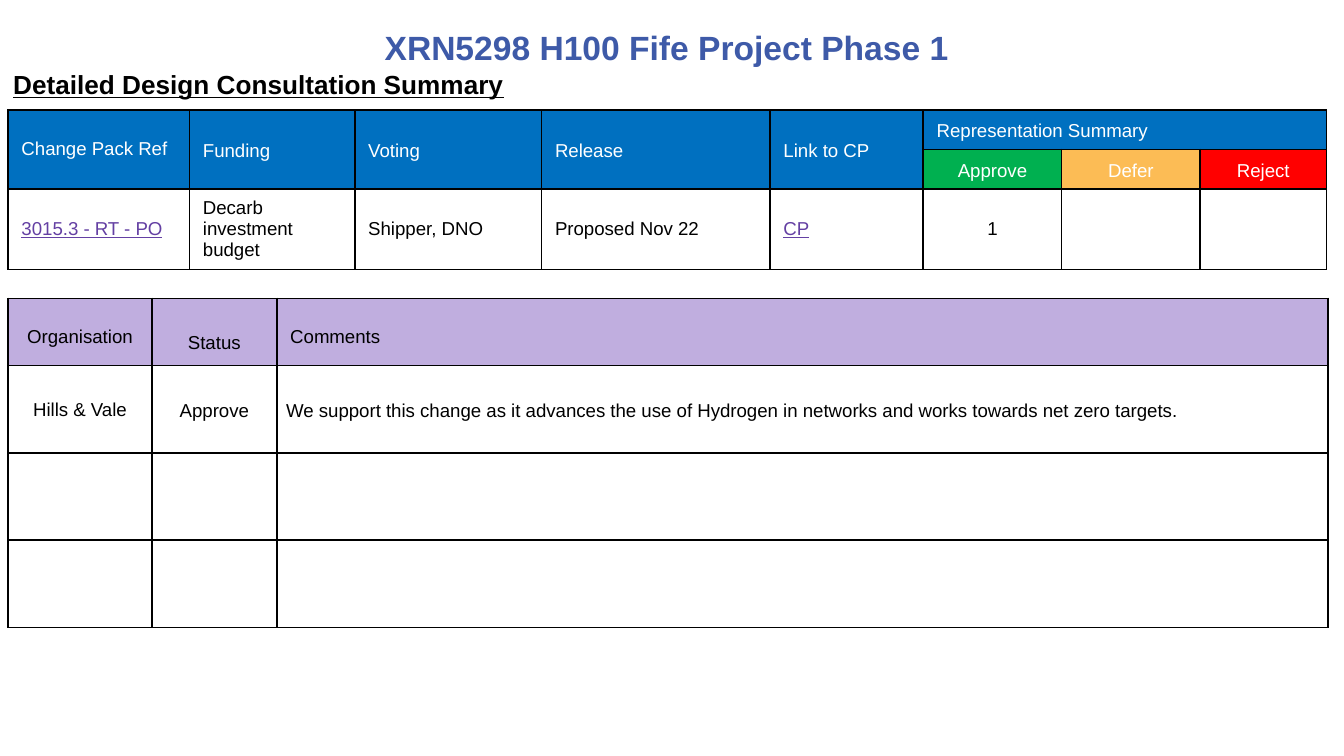
"""Build the consultation summary slide with its two tables."""
from dataclasses import dataclass
from typing import Optional

from lxml import etree
from pptx import Presentation
from pptx.dml.color import RGBColor
from pptx.enum import text as t
from pptx.oxml import ns
from pptx.util import Inches, Pt

BLACK, WHITE, BLUE, LILAC, LINK = "000000", "FFFFFF", "0070C0", "C0AEDF", "6440A3"
LEFT, CENTER = t.PP_ALIGN.LEFT, t.PP_ALIGN.CENTER
TOP, MIDDLE = t.MSO_ANCHOR.TOP, t.MSO_ANCHOR.MIDDLE


@dataclass
class Entry:
    row: int
    col: int
    text: str
    color: str = BLACK
    fill: Optional[str] = None
    align: t.PP_ALIGN = LEFT
    anchor: t.MSO_ANCHOR = MIDDLE
    spacing: Optional[float] = None
    underline: bool = False
    margins: tuple = (0.1, 0.05, 0.1, 0.05)
    span: tuple = (1, 1)


@dataclass
class Grid:
    left: float
    top: float
    height: float
    cols: list
    rows: list
    entries: list


def rgb(value: str) -> RGBColor:
    return RGBColor.from_string(value)


def style(paragraph, size: float, color: str, bold: bool = False, underline: bool = False) -> None:
    for run in paragraph.runs:
        font = run.font
        font.name, font.size, font.bold, font.underline = "Arial", Pt(size), bold, underline
        font.color.rgb = rgb(color)


def add_borders(cell, color: str = BLACK, width: float = 1) -> None:
    properties = cell._tc.get_or_add_tcPr()
    for index, side in enumerate(("a:lnL", "a:lnR", "a:lnT", "a:lnB")):
        line = etree.Element(ns.qn(side), w=str(Pt(width)))
        fill = etree.SubElement(line, ns.qn("a:solidFill"))
        etree.SubElement(fill, ns.qn("a:srgbClr"), val=color)
        properties.insert(index, line)


def fill_cell(table, entry: Entry) -> None:
    cell = table.cell(entry.row, entry.col)
    height, width = entry.span
    if entry.span != (1, 1):
        cell.merge(table.cell(entry.row + height - 1, entry.col + width - 1))
    cell.text_frame.text = entry.text
    cell.vertical_anchor = entry.anchor
    cell.margin_left, cell.margin_top, cell.margin_right, cell.margin_bottom = map(Inches, entry.margins)
    paragraph = cell.text_frame.paragraphs[0]
    paragraph.alignment = entry.align
    if entry.spacing:
        paragraph.line_spacing = entry.spacing
    style(paragraph, 10, entry.color, underline=entry.underline)
    if entry.fill:
        cell.fill.solid()
        cell.fill.fore_color.rgb = rgb(entry.fill)


def add_grid(slide, grid: Grid) -> None:
    frame = slide.shapes.add_table(
        len(grid.rows), len(grid.cols), Inches(grid.left), Inches(grid.top),
        Inches(sum(grid.cols)), Inches(grid.height))
    table = frame.table
    table.first_row = table.horz_banding = False
    for column, width in zip(table.columns, grid.cols):
        column.width = Inches(width)
    for row, height in zip(table.rows, grid.rows):
        row.height = Inches(height)
    for cell in table.iter_cells():
        cell.fill.background()
        add_borders(cell)
    for entry in grid.entries:
        fill_cell(table, entry)
    frame.height = Inches(grid.height)


def change_pack() -> Grid:
    headings = ["Change Pack Ref", "Funding", "Voting", "Release", "Link to CP"]
    votes = [("Approve", "00B050"), ("Defer", "FCBC55"), ("Reject", "FF0000")]
    details = ["3015.3 - RT - PO", "Decarb investment budget", "Shipper, DNO",
               "Proposed Nov 22", "CP", "1"]
    links = (0, 4)
    entries = [Entry(0, col, name, WHITE, BLUE, spacing=1.15 if col else None, span=(2, 1))
               for col, name in enumerate(headings)]
    entries.append(Entry(0, 5, "Representation Summary", WHITE, BLUE, spacing=1.15, span=(1, 3)))
    entries += [Entry(1, col, name, WHITE, fill, CENTER, spacing=1.15)
                for col, (name, fill) in enumerate(votes, start=5)]
    entries += [Entry(2, col, detail, LINK if col in links else BLACK,
                      align=CENTER if col == 5 else LEFT, underline=col in links)
                for col, detail in enumerate(details)]
    return Grid(0.06, 0.82, 1.15, [1.35, 1.23, 1.39, 1.7, 1.14, 1.03, 1.03, 0.94],
                [0.26, 0.26, 0.56], entries)


def responses() -> Grid:
    heading_margins = (0.1, 0.21, 0.1, 0.05)
    comment = ("We support this change as it advances the use of Hydrogen in networks "
               "and works towards net zero targets.")
    entries = [
        Entry(0, 0, "Organisation", fill=LILAC, align=CENTER, anchor=TOP, margins=heading_margins),
        Entry(0, 1, "Status", fill=LILAC, align=CENTER, margins=(0.06, 0.16, 0.06, 0)),
        Entry(0, 2, "Comments", fill=LILAC, anchor=TOP, margins=heading_margins),
        Entry(1, 0, "Hills & Vale", align=CENTER, margins=(0.01, 0.01, 0.01, 0)),
        Entry(1, 1, "Approve", align=CENTER, spacing=1.15, margins=(0.06, 0, 0.06, 0)),
        Entry(1, 2, comment, spacing=1.15, margins=(0.07, 0, 0.07, 0)),
    ]
    return Grid(0.06, 2.22, 2.46, [1.07, 0.93, 7.82], [0.5] + [0.65] * 3, entries)


def main() -> None:
    deck = Presentation()
    deck.slide_width = Inches(10)
    deck.slide_height = deck.slide_width * 9 // 16
    slide = deck.slides.add_slide(deck.slide_layouts[5])

    title = slide.shapes.title
    title.left, title.top, title.width, title.height = map(Inches, (0.06, 0.04, 9.87, 0.62))
    title.text_frame.text = "XRN5298 H100 Fife Project Phase 1 "
    title.text_frame.vertical_anchor = MIDDLE
    title.text_frame.paragraphs[0].alignment = CENTER
    style(title.text_frame.paragraphs[0], 18, "3E5AA8", bold=True)

    subtitle = slide.shapes.add_textbox(*map(Inches, (0, 0.46, 4.77, 0.34))).text_frame
    subtitle.word_wrap = True
    subtitle.auto_size = t.MSO_AUTO_SIZE.SHAPE_TO_FIT_TEXT
    subtitle.text = "Detailed Design Consultation Summary"
    style(subtitle.paragraphs[0], 14, BLACK, bold=True, underline=True)

    for grid in (change_pack(), responses()):
        add_grid(slide, grid)
    deck.save("out.pptx")


if __name__ == "__main__":
    main()
